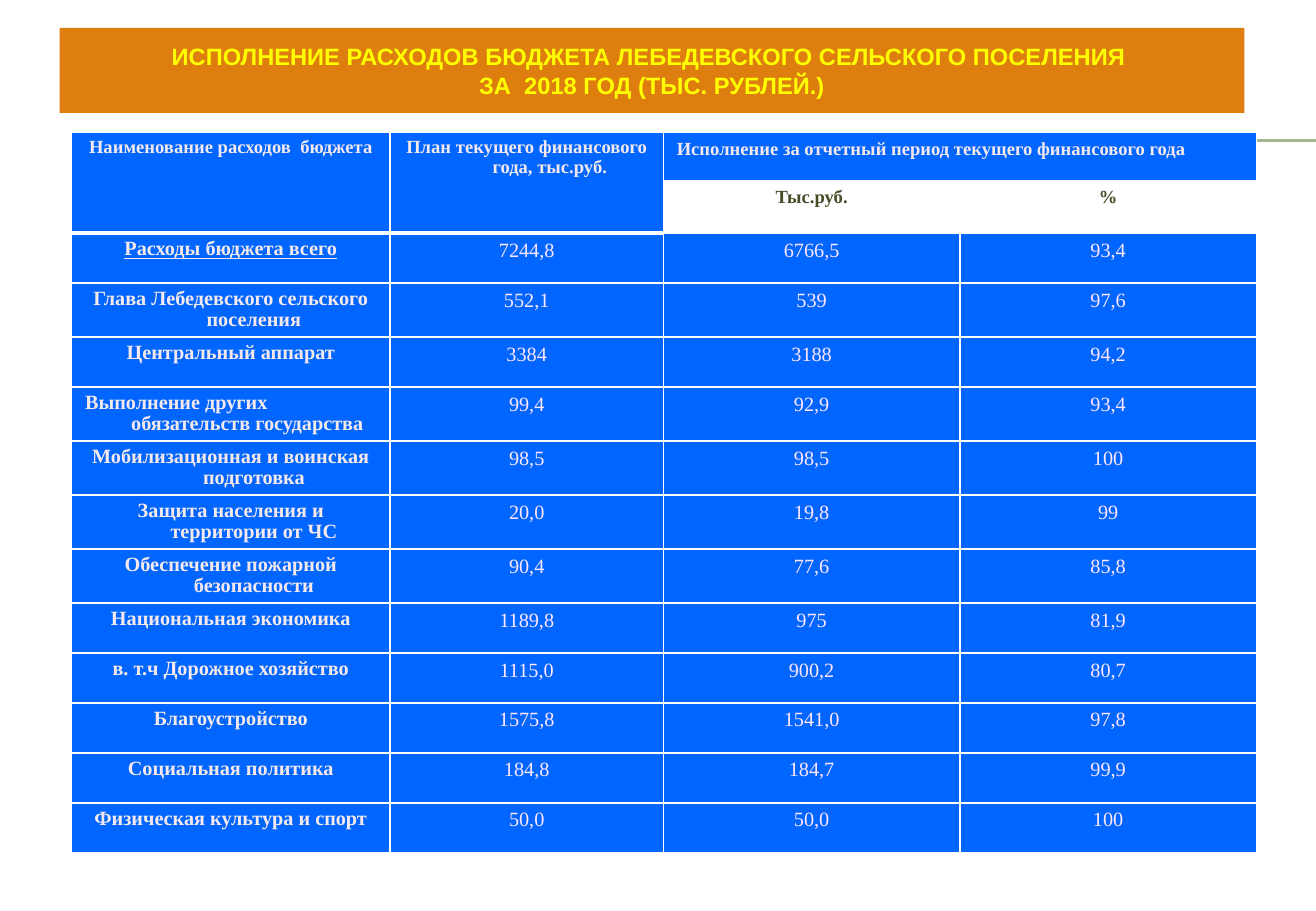
from copy import deepcopy

from lxml.etree import SubElement
from pptx import Presentation
from pptx.dml.color import RGBColor
from pptx.enum.shapes import MSO_CONNECTOR, MSO_SHAPE
from pptx.enum.text import MSO_ANCHOR, PP_ALIGN
from pptx.oxml.ns import qn
from pptx.util import Inches, Pt

WIDTH, HEIGHT = 10.83, 7.5
TITLE_BOX = (0.49, 0.23, 9.75, 0.7)
TABLE_BOX = (0.59, 1.09, 9.75, 5.76)
RULE_BOX = (0.61, 1.15, 10.22, 0.01)

COLORS = {"orange": "DD7E0E", "yellow": "FFFF00", "blue": "0066FF", "white": "FFFFFF",
          "label": "F6E9ED", "value": "FEE6FD", "olive": "444D26", "rule": "A5B592"}

TITLE = ("ИСПОЛНЕНИЕ РАСХОДОВ БЮДЖЕТА ЛЕБЕДЕВСКОГО СЕЛЬСКОГО ПОСЕЛЕНИЯ \v"
         "ЗА  2018 ГОД (ТЫС. РУБЛЕЙ.)")
COL_SHARES = (2.62, 2.25, 2.44, 2.44)
HEADER_ROWS = 2
# row, column, text, rows spanned, columns spanned
HEADERS = [
    (0, 0, "Наименование расходов  бюджета", 2, 1),
    (0, 1, "План текущего финансового года, тыс.руб.", 2, 1),
    (0, 2, "Исполнение за отчетный период текущего финансового года", 1, 2),
    (1, 2, "Тыс.руб.", 1, 1),
    (1, 3, "%", 1, 1),
]
EXPENSES = [
    ("Расходы бюджета всего", "7244,8", "6766,5", "93,4"),
    ("Глава Лебедевского сельского поселения", "552,1", "539", "97,6"),
    ("Центральный аппарат", "3384", "3188", "94,2"),
    ("Выполнение других обязательств государства", "99,4", "92,9", "93,4"),
    ("Мобилизационная и воинская подготовка", "98,5", "98,5", "100"),
    ("Защита населения и территории от ЧС", "20,0", "19,8", "99"),
    ("Обеспечение пожарной безопасности", "90,4", "77,6", "85,8"),
    ("Национальная экономика", "1189,8", "975", "81,9"),
    ("в. т.ч Дорожное хозяйство", "1115,0", "900,2", "80,7"),
    ("Благоустройство", "1575,8", "1541,0", "97,8"),
    ("Социальная политика", "184,8", "184,7", "99,9"),
    ("Физическая культура и спорт", "50,0", "50,0", "100"),
]
HEADER = {"name": "Times New Roman", "size": Pt(11), "bold": True}
LABEL = HEADER | {"size": Pt(12)}
VALUE = LABEL | {"bold": False}
HANGING = {"line_spacing": 0.93, "space_after": Pt(6)}


def rgb(name):
    return RGBColor.from_string(COLORS[name])


def set_all(obj, values):
    for name, value in values.items():
        setattr(obj, name, value)


def format_runs(p, font, color):
    for r in p.runs:
        set_all(r.font, font)
        r.font.color.rgb = rgb(color)


def set_borders(cell, bottom):
    tcPr = cell._tc.get_or_add_tcPr()
    for i, (side, width) in enumerate({"L": 1, "R": 1, "T": 1, "B": bottom}.items()):
        ln = tcPr.makeelement(qn(f"a:ln{side}"), {"w": str(Pt(width))})
        SubElement(SubElement(ln, qn("a:solidFill")), qn("a:srgbClr"), val=COLORS["white"])
        tcPr.insert(i, ln)


def fill_cell(cell, text, font, color, fill="blue", align=PP_ALIGN.CENTER,
              hanging=True, bottom=1):
    set_all(cell, {"margin_left": Inches(0.11), "margin_right": Inches(0.11),
                   "margin_top": Inches(0.05), "margin_bottom": Inches(0.05)})
    cell.fill.solid()
    cell.fill.fore_color.rgb = rgb(fill)
    set_borders(cell, bottom)
    cell.text = text
    p = cell.text_frame.paragraphs[0]
    p.alignment = align
    if hanging:
        set_all(p, HANGING)
        pPr = p._p.get_or_add_pPr()
        pPr.set("marL", str(Inches(0.38)))
        pPr.set("indent", str(Inches(-0.38)))
    format_runs(p, font, color)


def add_rules(slide, box):
    """Draw a double line along the top and bottom of the box."""
    x, y, w, h = box
    for top in (y, y + h):
        line = slide.shapes.add_connector(
            MSO_CONNECTOR.STRAIGHT, *map(Inches, (x, top, x + w, top)))
        line.line.color.rgb = rgb("rule")
        line.line.width = Pt(0.75)
        SubElement(line._element.spPr, qn("a:effectLst"))


def add_title(slide, box):
    sp = slide.shapes.add_shape(MSO_SHAPE.RECTANGLE, *map(Inches, box))
    sp.shadow.inherit = False
    sp.fill.solid()
    sp.fill.fore_color.rgb = rgb("orange")
    sp.line.fill.background()
    tf = sp.text_frame
    set_all(tf, {"word_wrap": True, "vertical_anchor": MSO_ANCHOR.MIDDLE})
    p = tf.paragraphs[0]
    p.text = TITLE
    p.alignment = PP_ALIGN.CENTER
    format_runs(p, {"name": "Arial", "size": Pt(14), "bold": True}, "yellow")
    for br in p._p.findall(qn("a:br")):
        br.append(deepcopy(p.runs[0]._r.rPr))


def add_expenses(slide, box):
    x, y, w, h = box
    n_rows = HEADER_ROWS + len(EXPENSES)
    table = slide.shapes.add_table(n_rows, len(COL_SHARES), *map(Inches, box)).table
    set_all(table, {"first_row": False, "horz_banding": False})
    for col, share in zip(table.columns, COL_SHARES):
        col.width = Inches(w * share / sum(COL_SHARES))
    for row in table.rows:
        row.height = Inches(h / n_rows)

    for i, j, text, rows, cols in HEADERS:
        cell = table.cell(i, j)
        if rows * cols > 1:
            cell.merge(table.cell(i + rows - 1, j + cols - 1))
        wide, sub = cols > 1, i > 0
        fill_cell(cell, text, HEADER, "olive" if sub else "label",
                  fill="white" if sub else "blue",
                  align=PP_ALIGN.LEFT if wide else PP_ALIGN.CENTER,
                  hanging=not wide, bottom=1 if sub else 3)
    for j in range(2):
        set_borders(table.cell(1, j), 3)

    for i, (label, *values) in enumerate(EXPENSES):
        row = i + HEADER_ROWS
        left = label.startswith("Выполнение")
        fill_cell(table.cell(row, 0), label, LABEL | {"underline": i == 0}, "label",
                  align=PP_ALIGN.LEFT if left else PP_ALIGN.CENTER)
        for j, value in enumerate(values, 1):
            fill_cell(table.cell(row, j), value, VALUE, "value", hanging=False)


def main():
    prs = Presentation()
    prs.slide_width, prs.slide_height = Inches(WIDTH), Inches(HEIGHT)
    slide = prs.slides.add_slide(prs.slide_layouts[6])
    add_rules(slide, RULE_BOX)
    add_title(slide, TITLE_BOX)
    add_expenses(slide, TABLE_BOX)
    prs.save("out.pptx")


if __name__ == "__main__":
    main()
